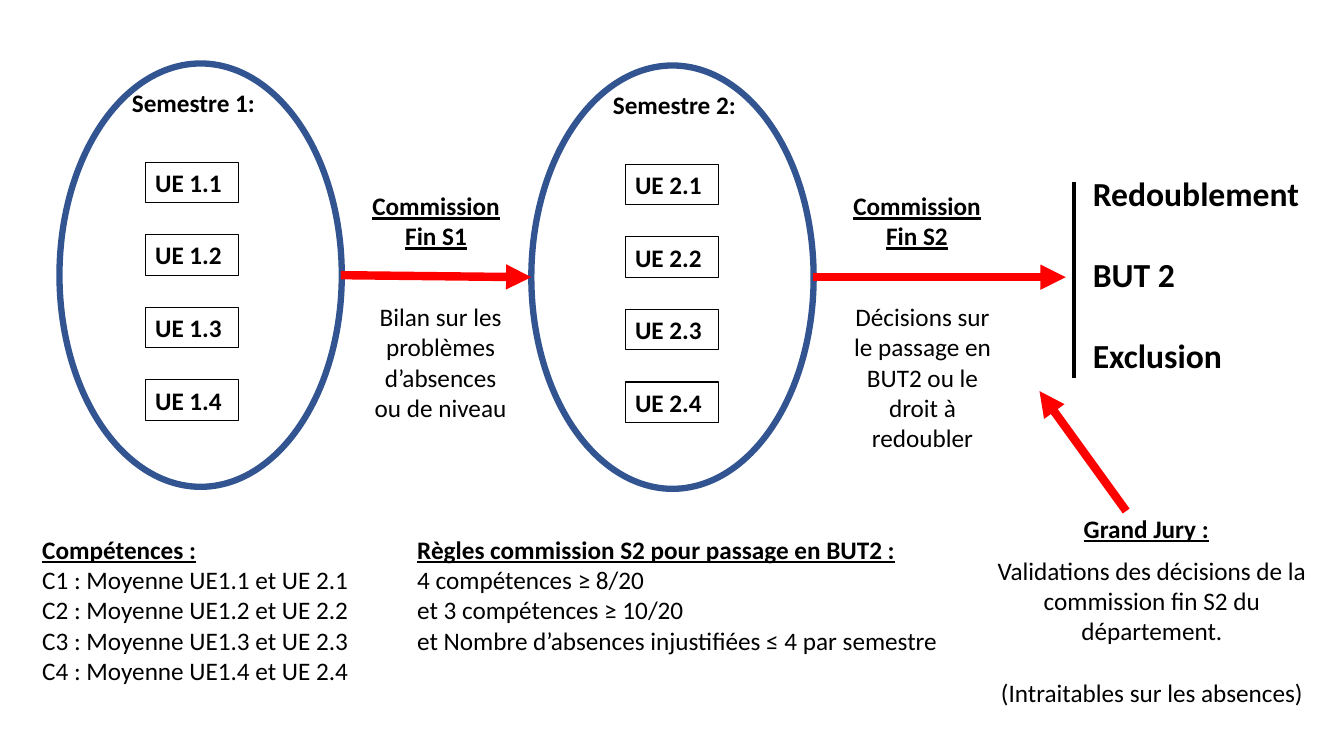
from pptx import Presentation
from pptx.dml.color import RGBColor
from pptx.enum.shapes import MSO_CONNECTOR, MSO_SHAPE
from pptx.enum.text import MSO_ANCHOR, PP_ALIGN
from pptx.oxml.ns import qn
from pptx.util import Inches, Pt
from lxml.etree import SubElement

BLACK, BLUE, RED = "000000", "325491", "FF0000"


def color(code):
    return RGBColor.from_string(code)


class Diagram:
    font_name = "Calibri"
    text_size = 18

    def __init__(self, slide):
        self.shapes = slide.shapes

    def fill_text(self, frame, lines, size=text_size, heads=0, bold=False,
                  centered=False, gap=0):
        frame.word_wrap = True
        frame.vertical_anchor = MSO_ANCHOR.TOP
        for index, line in enumerate(lines):
            paragraph = frame.paragraphs[0] if index == 0 else frame.add_paragraph()
            paragraph.text = line
            paragraph.alignment = PP_ALIGN.CENTER if centered else PP_ALIGN.LEFT
            paragraph.space_before = Pt(gap if index else 0)
            font = paragraph.font
            font.name = self.font_name
            font.size = Pt(size)
            font.color.rgb = color(BLACK)
            font.bold = bold or index < heads
            font.underline = index < heads

    def text(self, left, top, width, height, lines, **style):
        box = self.shapes.add_textbox(
            Inches(left), Inches(top), Inches(width), Inches(height))
        self.fill_text(box.text_frame, lines, **style)

    def outline(self, kind, left, top, width, height, stroke, weight):
        shape = self.shapes.add_shape(
            kind, Inches(left), Inches(top), Inches(width), Inches(height))
        shape.shadow.inherit = False
        shape.fill.background()
        shape.line.color.rgb = color(stroke)
        shape.line.width = Pt(weight)
        return shape

    def unit(self, left, top, label):
        shape = self.outline(MSO_SHAPE.RECTANGLE, left, top, 0.93, 0.4, BLACK, 0.75)
        self.fill_text(shape.text_frame, [label], bold=True)

    def semester(self, number, left, top, title_left, unit_left):
        self.text(title_left, top + 0.19, 1.51, 0.4,
                  [f"Semestre {number}:"], bold=True)
        self.outline(MSO_SHAPE.OVAL, left, top, 2.8, 4.2, BLUE, 4.5)
        for row in range(4):
            self.unit(unit_left, top + 0.98 + 0.72 * row, f"UE {number}.{row + 1}")

    def line(self, start, end, stroke, weight, arrow=False):
        connector = self.shapes.add_connector(
            MSO_CONNECTOR.STRAIGHT, *map(Inches, start + end))
        connector.line.color.rgb = color(stroke)
        connector.line.width = Pt(weight)
        properties = connector._element.spPr
        if arrow:
            SubElement(properties.find(qn("a:ln")), qn("a:tailEnd"), type="triangle")
        SubElement(properties, qn("a:effectLst"))

    def arrow(self, start, end):
        self.line(start, end, RED, 6, arrow=True)


def main():
    presentation = Presentation()
    presentation.slide_width = Inches(13.33)
    presentation.slide_height = Inches(7.5)
    diagram = Diagram(presentation.slides.add_slide(presentation.slide_layouts[6]))

    diagram.semester(1, 0.59, 0.63, 1.21, 1.44)
    diagram.semester(2, 5.27, 0.65, 5.98, 6.2)

    diagram.arrow((3.38, 2.73), (5.27, 2.75))
    diagram.arrow((8.06, 2.75), (10.57, 2.75))
    diagram.arrow((11.17, 5.07), (10.31, 3.88))
    diagram.line((10.65, 1.81), (10.65, 3.75), BLACK, 3)

    commissions = [
        (3.57, 3.57, 1.31, "Bilan sur les problèmes d’absences ou de niveau"),
        (8.34, 8.35, 1.62, "Décisions sur le passage en BUT2 ou le droit à redoubler"),
    ]
    for number, (left, role_left, role_height, role) in enumerate(commissions, 1):
        diagram.text(left, 1.84, 1.51, 0.71,
                     ["Commission", f"Fin S{number}"], heads=2, centered=True)
        diagram.text(role_left, 2.94, 1.6, role_height, [role], centered=True)

    diagram.text(10.74, 1.67, 2.31, 2.12, ["Redoublement", "BUT 2", "Exclusion"],
                 size=24, bold=True, gap=29)

    skills = [f"C{n} : Moyenne UE1.{n} et UE 2.{n}" for n in range(1, 5)]
    diagram.text(0.32, 5.25, 3.71, 1.62, ["Compétences :", *skills], heads=1)
    diagram.text(4.04, 5.25, 5.4, 1.31, [
        "Règles commission S2 pour passage en BUT2 :",
        "4 compétences ≥ 8/20",
        "et 3 compétences ≥ 10/20",
        "et Nombre d’absences injustifiées ≤ 4 par semestre",
    ], heads=1)

    diagram.text(10.65, 5.04, 1.51, 0.4, ["Grand Jury :"], heads=1)
    diagram.text(9.79, 5.46, 3.27, 1.62, [
        "Validations des décisions de la commission fin S2 du département.",
        "(Intraitables sur les absences)",
    ], centered=True, gap=22)

    presentation.save("out.pptx")


if __name__ == "__main__":
    main()
